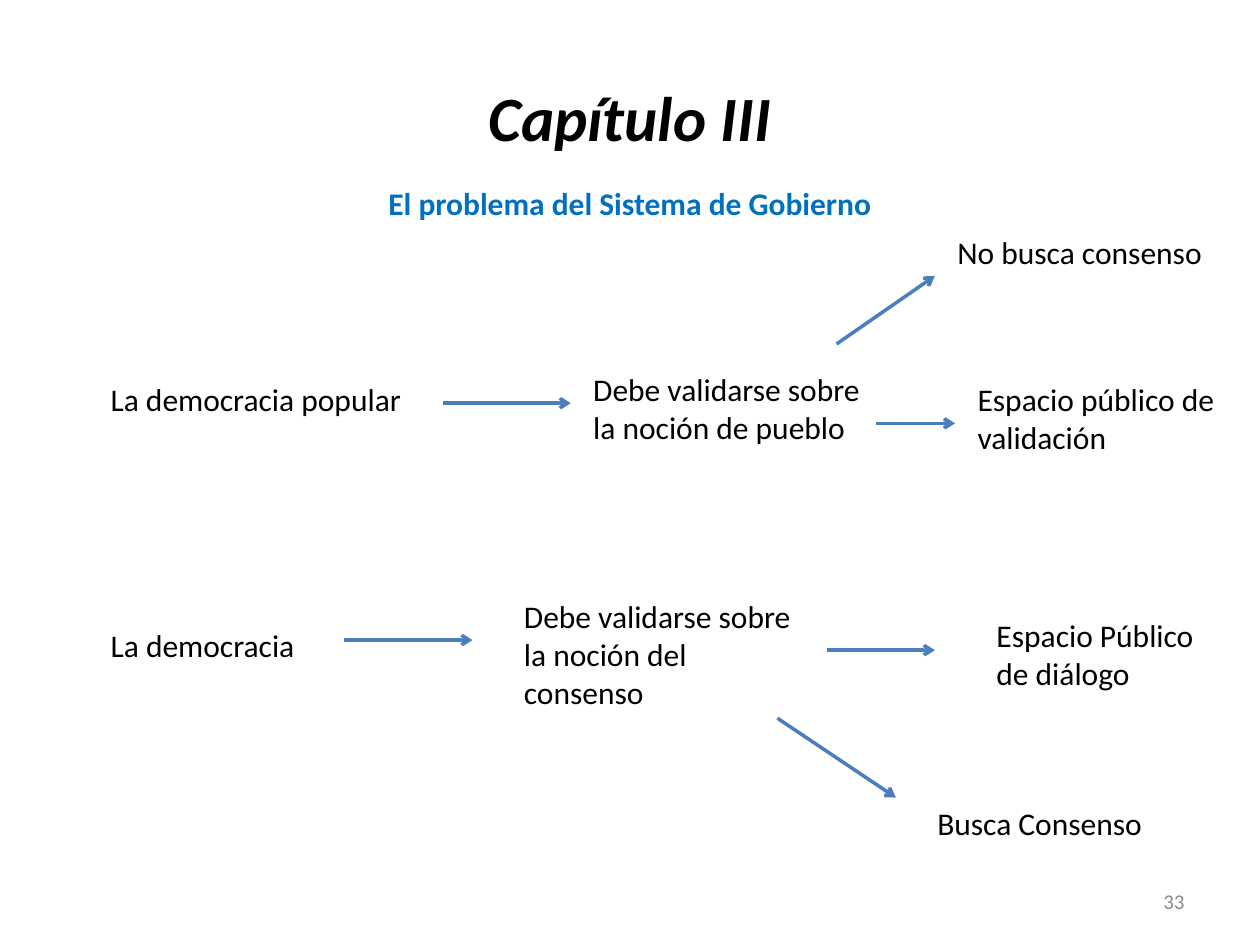
from dataclasses import dataclass

from lxml import etree
from pptx import Presentation
from pptx.dml.color import RGBColor
from pptx.enum.shapes import MSO_CONNECTOR
from pptx.enum.text import MSO_ANCHOR, PP_ALIGN
from pptx.oxml.ns import qn
from pptx.util import Inches, Pt

STRAIGHT = MSO_CONNECTOR.STRAIGHT
TOP, MIDDLE = MSO_ANCHOR.TOP, MSO_ANCHOR.MIDDLE
LEFT, CENTER, RIGHT = PP_ALIGN.LEFT, PP_ALIGN.CENTER, PP_ALIGN.RIGHT

FONT = "Calibri"
COLORS = {
    "text": "000000",
    "subtitle": "0070C0",
    "number": "8C8C8C",
    "arrow": "4B7EBC",
}


@dataclass
class Label:
    text: str
    left: float
    top: float
    width: float
    height: float = 0.4
    size: int = 18
    color: str = "text"
    bold: bool = False
    italic: bool = False
    align: PP_ALIGN = LEFT
    anchor: MSO_ANCHOR = TOP


@dataclass
class Arrow:
    x1: float
    y1: float
    x2: float
    y2: float


LABELS = [
    Label("Capítulo III", 0, 0.3, 10, 1.25, size=36, bold=True, italic=True,
          align=CENTER, anchor=MIDDLE),
    Label("El problema del Sistema de Gobierno", 0, 1.41, 10, color="subtitle",
          bold=True, align=CENTER),
    Label("La democracia popular", 0.78, 2.97, 2.73),
    Label("Debe validarse sobre la noción de pueblo", 4.61, 2.89, 2.34, 0.71),
    Label("No busca consenso", 7.5, 1.8, 2.34),
    Label("Espacio público de validación", 7.66, 2.97, 2.19, 0.71),
    Label("La democracia", 0.78, 4.92, 2.42),
    Label("Debe validarse sobre la noción del consenso", 4.06, 4.69, 2.42, 1.01),
    Label("Espacio Público de diálogo", 7.81, 4.84, 1.88, 0.71),
    Label("Busca Consenso", 7.34, 6.33, 1.95),
    Label("33", 7.17, 6.95, 2.33, size=12, color="number", align=RIGHT,
          anchor=MIDDLE),
]

ARROWS = [
    Arrow(3.52, 3.2, 4.53, 3.2),
    Arrow(6.64, 2.73, 7.42, 2.19),
    Arrow(6.95, 3.36, 7.58, 3.36),
    Arrow(2.73, 5.08, 3.75, 5.08),
    Arrow(6.56, 5.16, 7.42, 5.16),
    Arrow(6.17, 5.7, 7.11, 6.33),
]


def add_label(slide, label: Label) -> None:
    sp = slide.shapes.add_textbox(Inches(label.left), Inches(label.top),
                                  Inches(label.width), Inches(label.height))
    tf = sp.text_frame
    tf.word_wrap = True
    tf.vertical_anchor = label.anchor
    tf.text = label.text
    p = tf.paragraphs[0]
    p.alignment = label.align
    font = p.runs[0].font
    font.name = FONT
    font.size = Pt(label.size)
    font.bold = label.bold
    font.italic = label.italic
    font.color.rgb = RGBColor.from_string(COLORS[label.color])


def add_arrow(slide, arrow: Arrow) -> None:
    cxn = slide.shapes.add_connector(STRAIGHT, Inches(arrow.x1), Inches(arrow.y1),
                                     Inches(arrow.x2), Inches(arrow.y2))
    cxn.line.color.rgb = RGBColor.from_string(COLORS["arrow"])
    cxn.line.width = Pt(2)
    sp_pr = cxn.element.spPr
    etree.SubElement(sp_pr.find(qn("a:ln")), qn("a:tailEnd"), type="arrow")
    etree.SubElement(sp_pr, qn("a:effectLst"))


def main() -> None:
    prs = Presentation()
    prs.slide_width, prs.slide_height = Inches(10), Inches(7.5)
    s = prs.slides.add_slide(prs.slide_layouts[6])
    for label in LABELS:
        add_label(s, label)
    for arrow in ARROWS:
        add_arrow(s, arrow)
    prs.save("out.pptx")


if __name__ == "__main__":
    main()
